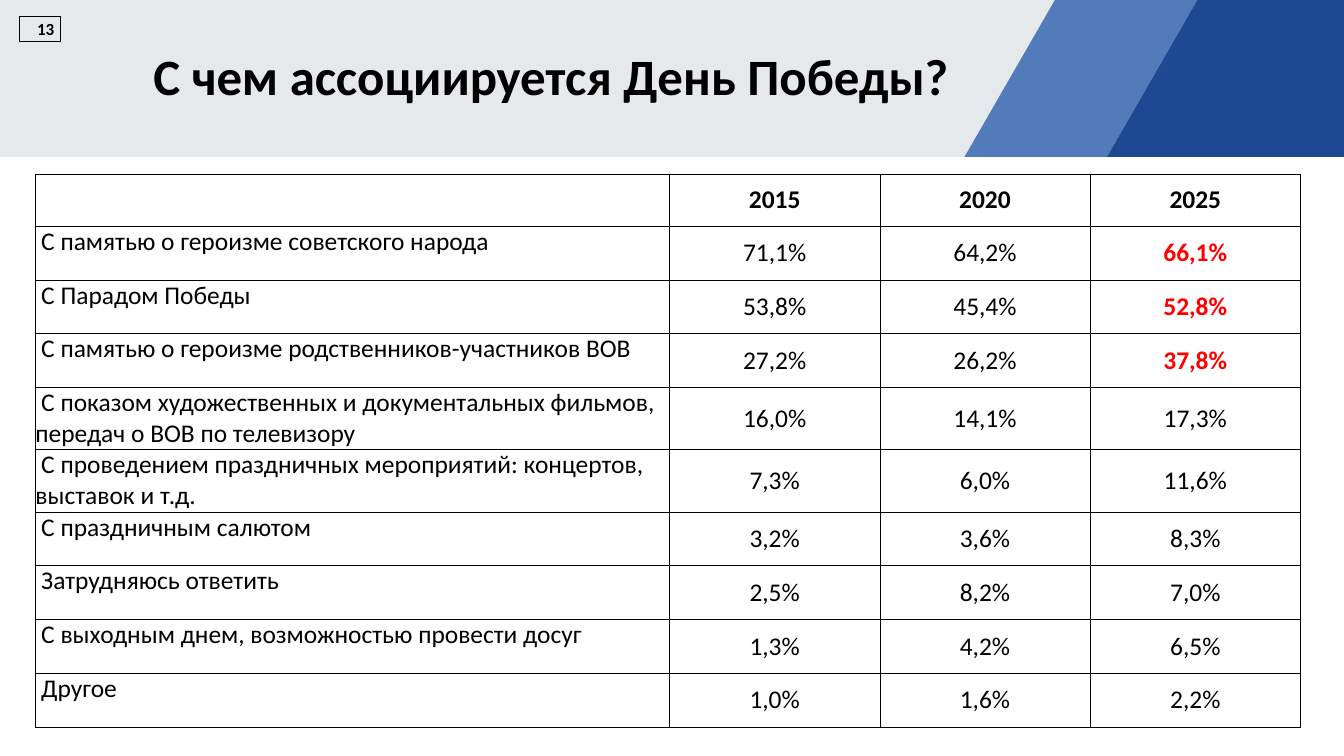
from dataclasses import dataclass

import lxml.etree
import pptx
import pptx.dml.color
import pptx.enum.shapes
import pptx.enum.text
import pptx.oxml
import pptx.oxml.ns
import pptx.util

Pt = pptx.util.Pt
Align = pptx.enum.text.PP_ALIGN
Anchor = pptx.enum.text.MSO_ANCHOR


@dataclass(frozen=True)
class Theme:
    """Colours, font and type sizes of the slide."""
    font: str = "Calibri"
    ink: str = "000000"
    accent: str = "FF0000"
    band_grey: str = "E6E9EB"
    band_light: str = "517BB9"
    band_dark: str = "1D4992"
    title_size: int = 60
    table_size: int = 30
    number_size: int = 20


THEME = Theme()
SLIDE_WIDTH, SLIDE_HEIGHT = 1583.28, 890.64
YEARS = ("2015", "2020", "2025")
ANSWERS = (
    ("С памятью о героизме советского народа", "71,1%", "64,2%", "66,1%"),
    ("С Парадом Победы", "53,8%", "45,4%", "52,8%"),
    ("С памятью о героизме родственников-участников ВОВ", "27,2%", "26,2%", "37,8%"),
    ("С показом художественных и документальных фильмов, передач о ВОВ по телевизору",
     "16,0%", "14,1%", "17,3%"),
    ("С проведением праздничных мероприятий: концертов, выставок и т.д.",
     "7,3%", "6,0%", "11,6%"),
    ("С праздничным салютом", "3,2%", "3,6%", "8,3%"),
    ("Затрудняюсь ответить", "2,5%", "8,2%", "7,0%"),
    ("С выходным днем, возможностью провести досуг", "1,3%", "4,2%", "6,5%"),
    ("Другое", "1,0%", "1,6%", "2,2%"),
)
HIGHLIGHTED_ANSWERS = 3
TWO_LINE_ROWS = (4, 5)


def apply_format(target, values):
    """Set each named attribute on the target."""
    for name, value in values.items():
        setattr(target, name, value)


def rgb(colour):
    """Return the colour object of a hex string."""
    return pptx.dml.color.RGBColor.from_string(colour)


def write_text(frame, text, size, alignment, bold=False, colour=THEME.ink, indent=0):
    """Write one formatted paragraph with a first-line indent."""
    paragraph = frame.paragraphs[0]
    paragraph.text = text
    paragraph.alignment = alignment
    if indent:
        properties = paragraph._p.get_or_add_pPr()
        properties.set("marL", "0")
        properties.set("indent", str(Pt(indent)))
    font = paragraph.runs[0].font
    apply_format(font, {"name": THEME.font, "size": Pt(size), "bold": bold})
    font.color.rgb = rgb(colour)


def add_header_band(slide, left, top, width, height):
    """Draw the header as three panels with slanted seams."""
    slant = 106.56
    right = left + width
    seam_light, seam_dark = left + 1136.16, left + 1303.92
    panels = (
        (THEME.band_grey, left, left, seam_light + slant + 2, seam_light + 2),
        (THEME.band_light, seam_light, seam_light + slant, seam_dark + slant, seam_dark),
        (THEME.band_dark, seam_dark, seam_dark + slant, right, right),
    )
    for colour, bottom_left, top_left, top_right, bottom_right in panels:
        bottom = top + height
        builder = slide.shapes.build_freeform(Pt(bottom_left), Pt(bottom))
        corners = ((top_left, top), (top_right, top), (bottom_right, bottom))
        builder.add_line_segments([(Pt(x), Pt(y)) for x, y in corners])
        panel = builder.convert_to_shape()
        panel.shadow.inherit = False
        panel.fill.solid()
        panel.fill.fore_color.rgb = rgb(colour)
        panel.line.fill.background()


def add_title(slide, left, top, width, height):
    """Place the title placeholder above the header band."""
    title = slide.shapes.title
    apply_format(title, {"left": Pt(left), "top": Pt(top),
                         "width": Pt(width), "height": Pt(height)})
    apply_format(title.text_frame, {"word_wrap": True, "vertical_anchor": Anchor.TOP,
                                    "auto_size": pptx.enum.text.MSO_AUTO_SIZE.NONE})
    write_text(title.text_frame, "С чем ассоциируется День Победы?",
               THEME.title_size, Align.CENTER, bold=True, indent=42.48)
    slide.shapes._spTree.append(title._element)


def add_page_number(slide, left, top, width, height):
    """Draw the framed page number."""
    frame = slide.shapes.add_shape(pptx.enum.shapes.MSO_SHAPE.RECTANGLE,
                                   Pt(left), Pt(top), Pt(width), Pt(height))
    frame.shadow.inherit = False
    frame.fill.background()
    frame.line.color.rgb = rgb(THEME.ink)
    frame.line.width = Pt(0.75)
    apply_format(frame.text_frame, {"word_wrap": True, "vertical_anchor": Anchor.MIDDLE})
    write_text(frame.text_frame, "13", THEME.number_size, Align.RIGHT, bold=True)


def format_cell(cell):
    """Clear the cell's fill and margins and rule all four sides."""
    for side in ("left", "top", "right", "bottom"):
        setattr(cell, f"margin_{side}", 0)
    properties = cell._tc.get_or_add_tcPr()
    for tag in ("lnL", "lnR", "lnT", "lnB"):
        border = lxml.etree.SubElement(properties, pptx.oxml.ns.qn(f"a:{tag}"),
                                       w=str(Pt(0.5)))
        fill = lxml.etree.SubElement(border, pptx.oxml.ns.qn("a:solidFill"))
        lxml.etree.SubElement(fill, pptx.oxml.ns.qn("a:srgbClr"), val=THEME.ink)
    cell.fill.background()


def add_answer_table(slide, left, top, width, height):
    """Build the table of answers by year."""
    rows = (("", *YEARS), *ANSWERS)
    table = slide.shapes.add_table(len(rows), len(rows[0]), Pt(left), Pt(top),
                                   Pt(width), Pt(height)).table
    apply_format(table, {"first_row": False, "horz_banding": False})
    year_width = 247.8
    for index, column in enumerate(table.columns):
        column.width = Pt(year_width if index else width - len(YEARS) * year_width)
    for row_index, texts in enumerate(rows):
        row_height = 69.12 if row_index in TWO_LINE_ROWS else 63.36
        table.rows[row_index].height = Pt(row_height if row_index else 61.2)
        for column_index, text in enumerate(texts):
            cell = table.cell(row_index, column_index)
            format_cell(cell)
            if not text:
                continue
            if column_index == 0:
                write_text(cell.text_frame, text, THEME.table_size, Align.LEFT, indent=6.8)
                continue
            cell.vertical_anchor = Anchor.MIDDLE
            highlighted = (column_index == len(YEARS)
                           and 1 <= row_index <= HIGHLIGHTED_ANSWERS)
            write_text(cell.text_frame, text, THEME.table_size, Align.CENTER,
                       bold=row_index == 0 or highlighted,
                       colour=THEME.accent if highlighted else THEME.ink)


def main():
    """Build the slide and save the presentation."""
    presentation = pptx.Presentation()
    apply_format(presentation, {"slide_width": Pt(SLIDE_WIDTH),
                                "slide_height": Pt(SLIDE_HEIGHT)})
    slide = presentation.slides.add_slide(presentation.slide_layouts[5])
    add_header_band(slide, 0, 0, SLIDE_WIDTH, 185)
    add_title(slide, 95.76, 48.96, 1064.16, 126)
    add_page_number(slide, 23, 18.7, 48.2, 30.2)
    add_answer_table(slide, 41.76, 205.2, 1490.4, 648.72)
    presentation.save("out.pptx")


if __name__ == "__main__":
    main()
